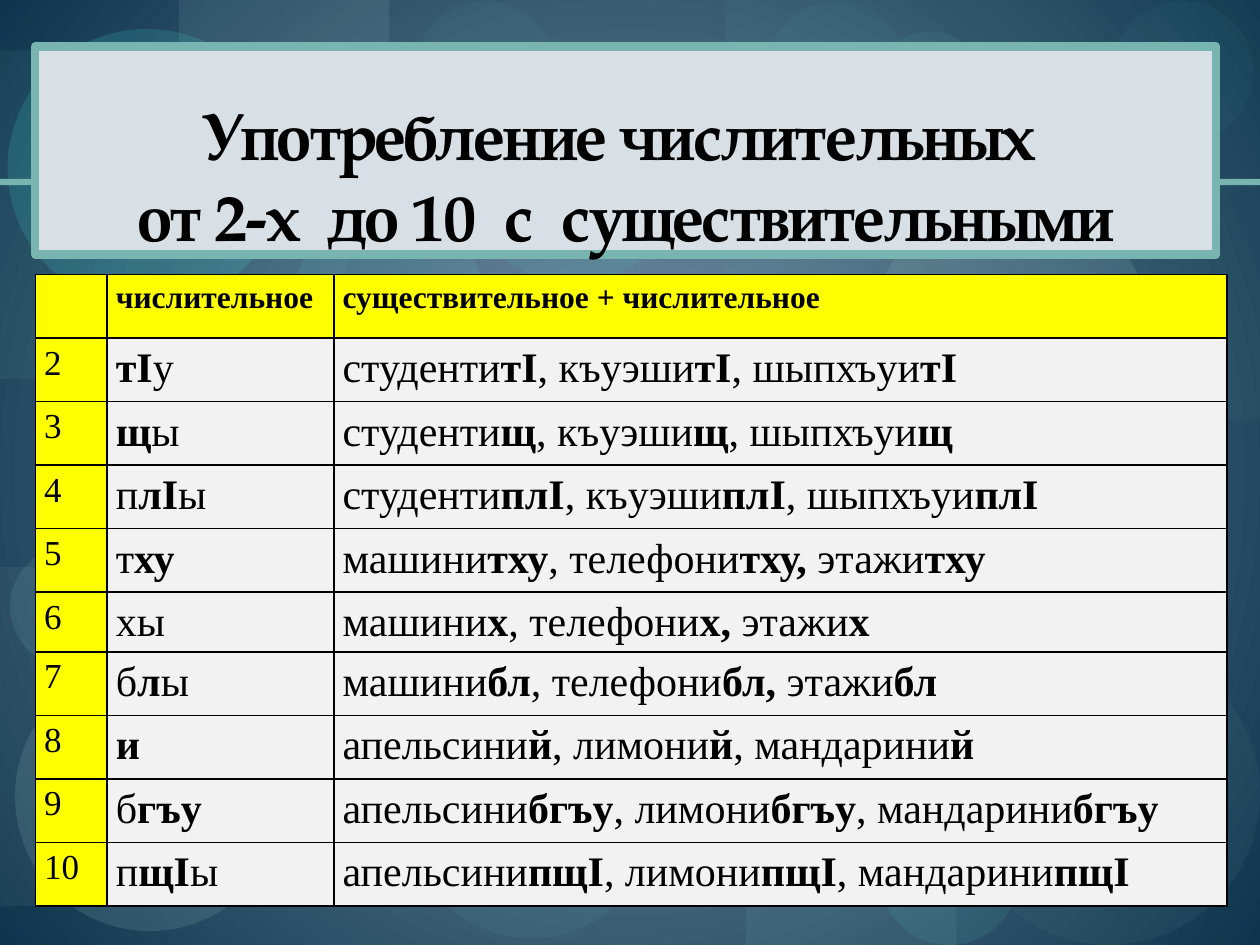
import pptx
import pptx.dml.color
import pptx.enum.shapes
import pptx.enum.text
import pptx.oxml
import pptx.oxml.ns
import pptx.util

# The slide is a grid of 100 columns by 75 rows; all lengths are in grid units.
COLUMNS, ROWS = 100, 75
UNIT = pptx.util.Inches(0.1)

COLOURS = {
    "centre": "7B96AA", "edge": "0E354D", "teal": "79B5B0", "panel": "D8E0E5",
    "text": "000000", "key": "FFFF00", "cell": "F2F2F2", "aqua": "65E8DC",
    "bright": "44EADC", "mint": "C1E8E4", "sage": "70A39E", "pale": "97DCD6",
    "deep": "549791", "grey": "B2B7BA", "sea": "77D6CE", "mist": "BED7D4",
    "lagoon": "61CDC4",
}
TITLE_FONT, TABLE_FONT = "TeX Gyre Pagella", "Times New Roman"
RECTANGLE = pptx.enum.shapes.MSO_SHAPE.RECTANGLE
OVAL = pptx.enum.shapes.MSO_SHAPE.OVAL

# Preset, left, top, width, height, colour, opacity in percent
DECORATIONS = [
    (RECTANGLE, 10, 25.1, 30, 23.3, "teal", 9),
    (OVAL, 32.6, 55.5, 19.2, 19, "deep", 13),
    (RECTANGLE, 57.5, 0, 42.5, 33.3, "teal", 6),
    (RECTANGLE, 0, 45, 25.8, 26.9, "grey", 8),
    (OVAL, 45.7, 26.1, 23.8, 23.8, "sage", 8),
    (OVAL, 69.8, 63.9, 11.1, 11.1, "aqua", 9),
    (OVAL, 69.1, 15.6, 22.4, 22.4, "mint", 11),
    (OVAL, 1.2, 52.5, 21.4, 21.4, "mint", 12),
    (OVAL, 22.1, 50.1, 11.2, 11.2, "aqua", 9),
    (OVAL, 45.6, 50.6, 16.6, 15.3, "bright", 8),
    (RECTANGLE, 0, 4, 27.5, 26.1, "sea", 7),
    (RECTANGLE, 14.2, 0, 16.7, 6.7, "mist", 10),
    (OVAL, 0.6, 2.3, 22.1, 22.1, "bright", 15),
    (OVAL, 0.8, 43.3, 9.7, 9.7, "pale", 10),
    (OVAL, 23.2, 16.5, 15.3, 15.3, "aqua", 9),
    (OVAL, 36.8, 5.1, 17.4, 17.4, "bright", 8),
    (OVAL, 56.8, 32.5, 35.4, 35.4, "lagoon", 10),
    (OVAL, 60.8, 0.1, 11.2, 11.2, "aqua", 4),
    (OVAL, 76, 51, 24, 24, "sage", 8),
    (OVAL, 17.5, 40.5, 13.1, 13.1, "pale", 10),
    (OVAL, 69.2, 2.5, 9, 9, "aqua", 6),
    (OVAL, 88.3, 0.1, 11.2, 11.2, "aqua", 4),
    (RECTANGLE, 59.2, 69.2, 16.7, 5.8, "teal", 10),
    (OVAL, 32.9, 0.1, 11.2, 11.2, "aqua", 4),
    (RECTANGLE, 0, 14.2, COLUMNS, 0.5, "teal", 100),
]

# Asterisks enclose bold text; {0} is the numeral's suffix.
PEOPLE = "студенти*{0}*, къуэши*{0}*, шыпхъуи*{0}*"
THINGS = "машини*{0}*, телефони*{0}, *этажи*{0}*"
FRUIT = "апельсини*{0}*, лимони*{0}*, мандарини*{0}*"
NUMERALS = [
    ("*тI*у", PEOPLE, "тI"), ("*щ*ы", PEOPLE, "щ"), ("п*лI*ы", PEOPLE, "плI"),
    ("т*ху*", THINGS, "тху"), ("хы", THINGS, "х"), ("б*л*ы", THINGS, "бл"),
    ("*и*", FRUIT, "й"), ("б*гъу*", FRUIT, "бгъу"), ("п*щI*ы", FRUIT, "пщI"),
]
HEADER = ("", "*числительное*", "*существительное + числительное*")
COLUMN_WIDTHS = (5.7, 18, 70.9)
ROW_HEIGHT, SHORT_ROW_HEIGHT, SHORT_ROW = 5.04, 4.74, 5


def grid(*lengths):
    return [round(length * UNIT) for length in lengths]


def colour(name):
    return pptx.dml.color.RGBColor.from_string(COLOURS[name])


def fill_solid(target, name):
    target.fill.solid()
    target.fill.fore_color.rgb = colour(name)


def format_run(run, font_name, size, bold):
    run.font.name = font_name
    run.font.size = pptx.util.Pt(size)
    run.font.bold = bold
    run.font.color.rgb = colour("text")


def paint_background(slide):
    """Radial gradient, light in the middle."""
    fill = slide.background.fill
    fill.gradient()
    for stop, name, position in zip(fill.gradient_stops, ("centre", "edge"), (0, 1)):
        stop.color.rgb = colour(name)
        stop.position = position
    namespace = pptx.oxml.ns.nsdecls("a")
    linear = next(slide.background.element.iter(pptx.oxml.ns.qn("a:lin")))
    linear.getparent().replace(linear, pptx.oxml.parse_xml(
        f'<a:path {namespace} path="circle">'
        '<a:fillToRect l="50000" t="50000" r="50000" b="50000"/></a:path>'))


def add_decoration(slide, preset, left, top, width, height, name, opacity):
    shape = slide.shapes.add_shape(preset, *grid(left, top, width, height))
    shape.shadow.inherit = False
    shape.line.fill.background()
    fill_solid(shape, name)
    if opacity < 100:
        solid = shape.element.spPr.find(pptx.oxml.ns.qn("a:solidFill"))
        solid[0].append(pptx.oxml.parse_xml(
            f'<a:alpha {pptx.oxml.ns.nsdecls("a")} val="{opacity * 1000}"/>'))


def place_title(slide, text):
    title = slide.shapes.title
    title.element.getparent().append(title.element)  # in front of the decorations
    title.left, title.top, title.width, title.height = grid(2.8, 3.7, 93.7, 16.5)
    fill_solid(title, "panel")
    title.line.color.rgb = colour("teal")
    title.line.width = pptx.util.Pt(4.72)
    frame = title.text_frame
    frame.text = text
    frame.auto_size = pptx.enum.text.MSO_AUTO_SIZE.NONE
    frame.vertical_anchor = pptx.enum.text.MSO_ANCHOR.BOTTOM
    frame.margin_bottom = 0
    paragraph = frame.paragraphs[0]
    paragraph.alignment = pptx.enum.text.PP_ALIGN.CENTER
    paragraph.line_spacing = pptx.util.Pt(46)
    for run in paragraph.runs:
        format_run(run, TITLE_FONT, 38, True)
        run.font._element.set("spc", "-100")


def add_borders(cell):
    properties = cell._tc.get_or_add_tcPr()
    for index, side in enumerate("LRTB"):
        properties.insert(index, pptx.oxml.parse_xml(
            f'<a:ln{side} {pptx.oxml.ns.nsdecls("a")} w="12700"><a:solidFill>'
            f'<a:srgbClr val="{COLOURS["text"]}"/></a:solidFill></a:ln{side}>'))


def fill_cell(cell, marked_text, size, fill_name):
    fill_solid(cell, fill_name)
    add_borders(cell)
    cell.margin_left, cell.margin_right = grid(0.7, 0.7)
    cell.margin_top = cell.margin_bottom = 0
    paragraph = cell.text_frame.paragraphs[0]
    paragraph.alignment = pptx.enum.text.PP_ALIGN.JUSTIFY
    paragraph.line_spacing = 1.15
    for index, part in enumerate(marked_text.split("*")):
        if part:
            run = paragraph.add_run()
            run.text = part
            format_run(run, TABLE_FONT, size, index % 2 == 1)


def add_numeral_table(slide):
    lines = [HEADER] + [(str(number), numeral, nouns.format(suffix))
                        for number, (numeral, nouns, suffix) in enumerate(NUMERALS, 2)]
    heights = [SHORT_ROW_HEIGHT if index == SHORT_ROW else ROW_HEIGHT
               for index in range(len(lines))]
    table = slide.shapes.add_table(
        len(lines), len(COLUMN_WIDTHS),
        *grid(2.8, 21.8, sum(COLUMN_WIDTHS), sum(heights))).table
    table.first_row = table.horz_banding = False
    for column, width in zip(table.columns, grid(*COLUMN_WIDTHS)):
        column.width = width
    for row_index, (row, height) in enumerate(zip(table.rows, grid(*heights))):
        row.height = height
        for column_index, text in enumerate(lines[row_index]):
            is_key = row_index == 0 or column_index == 0
            size = 18 if row_index == 0 else 20 if column_index == 0 else 24
            fill_cell(table.cell(row_index, column_index), text, size,
                      "key" if is_key else "cell")


def main():
    presentation = pptx.Presentation()
    presentation.slide_width, presentation.slide_height = grid(COLUMNS, ROWS)
    slide = presentation.slides.add_slide(presentation.slide_layouts[5])
    paint_background(slide)
    for decoration in DECORATIONS:
        add_decoration(slide, *decoration)
    place_title(slide, "Употребление числительных \vот 2-х  до 10  с  существительными")
    add_numeral_table(slide)
    presentation.save("out.pptx")


if __name__ == "__main__":
    main()
